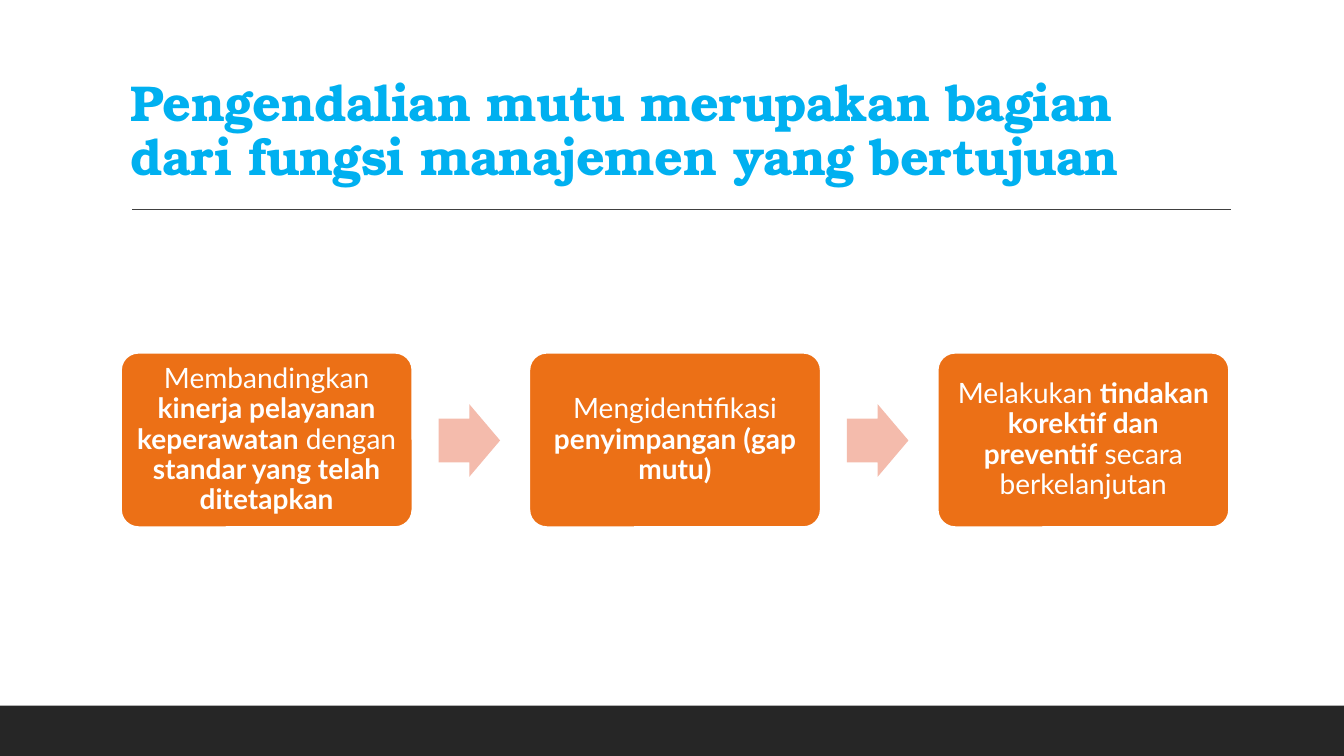
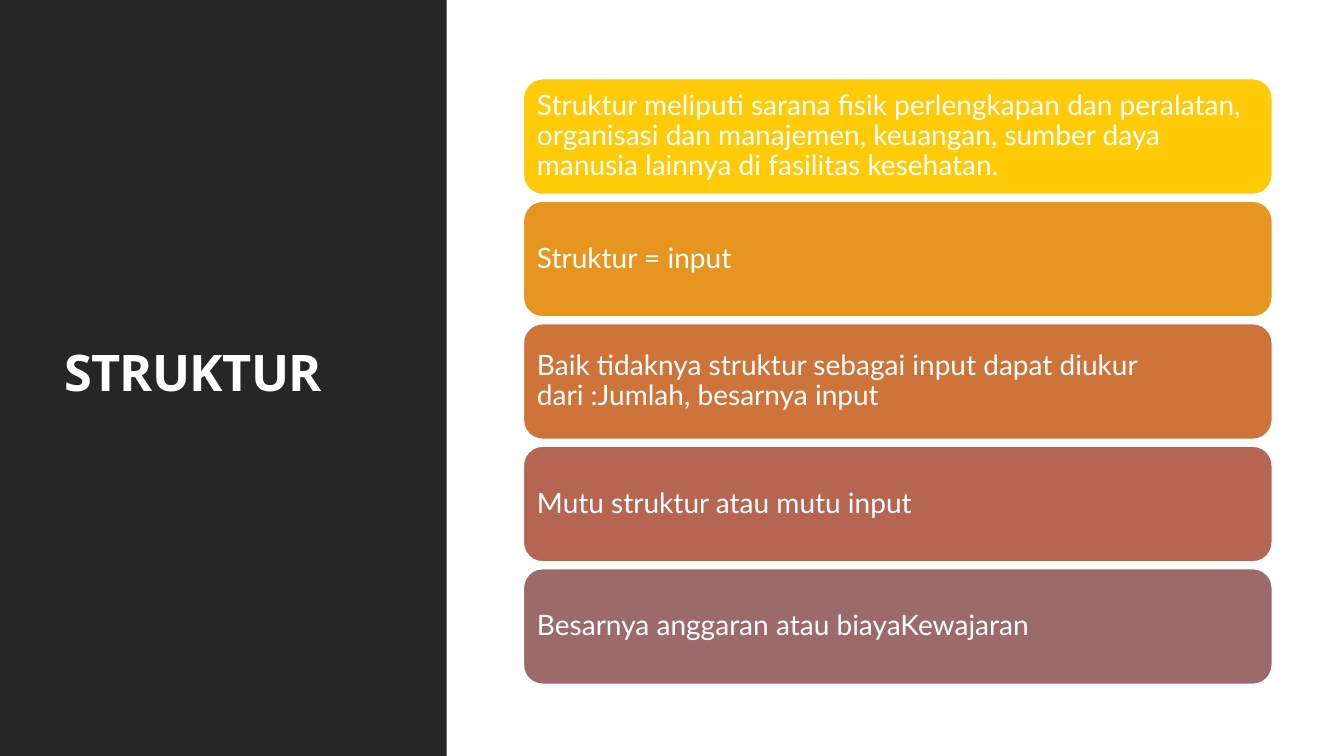
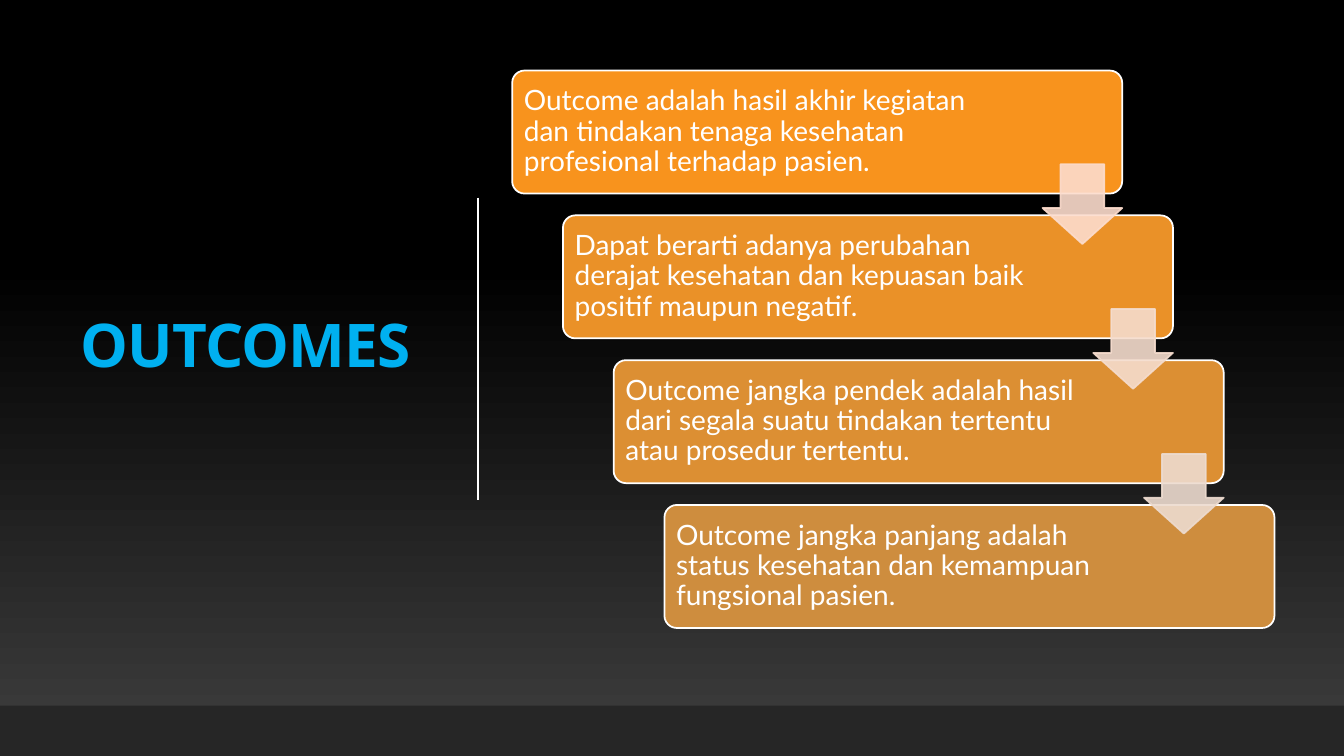
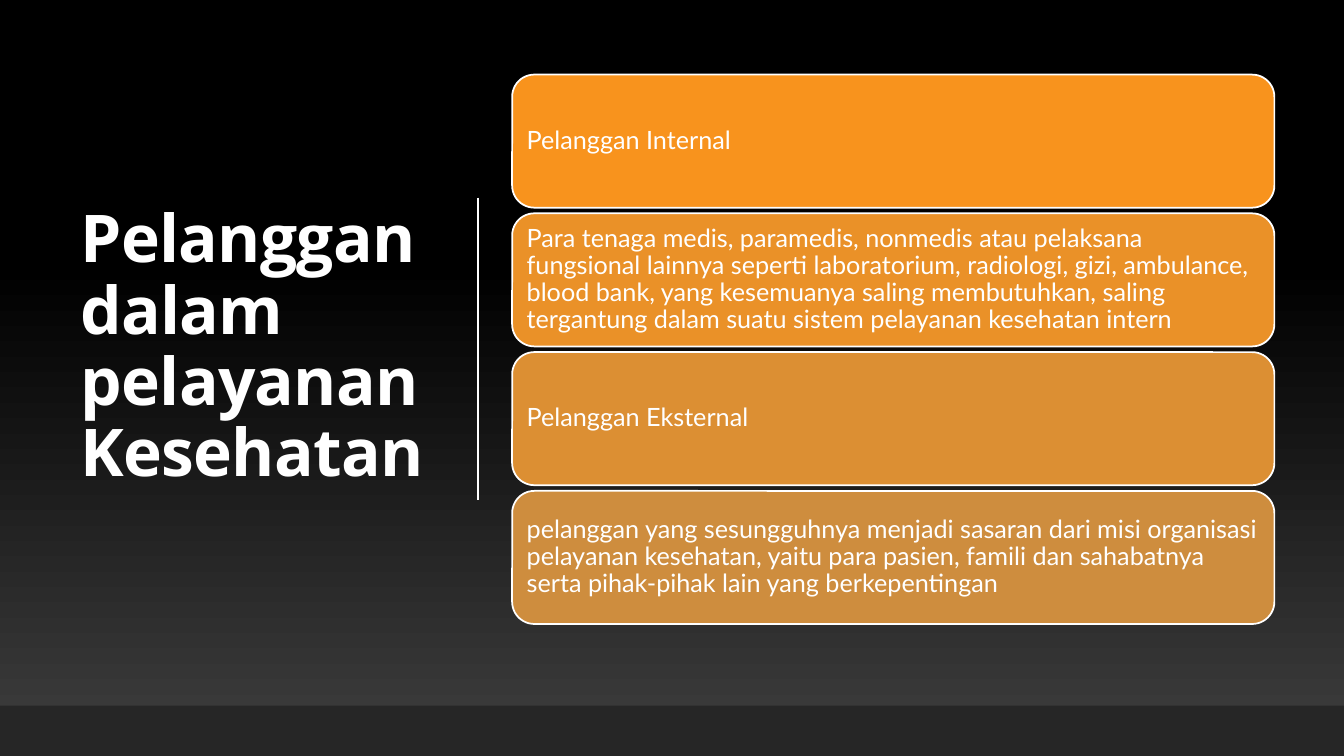
"""Build four slides on quality control in health care."""
from lxml import etree
from pptx import Presentation
from pptx import util as u
from pptx.dml.color import RGBColor
from pptx.enum import shapes, text
from pptx.oxml import ns

COLORS = {
    "white": "FFFFFF", "black": "000000", "dark": "262626", "gray": "3F3F3F",
    "rule": "404040", "blue": "00B0F0", "orange": "EC7016", "pink": "F4BBAC",
}
STRUCTURE_FILLS = ["FFCA08", "E69520", "CE7339", "B56551", "9C6A6A"]
ORANGE_FILLS = ["F8931D", "EA9128", "DC8F33", "CE8D3E"]
ARROW_FILLS = ["FCDCCD", "F5DCCD", "EDDBCF"]
BAND = (0, 7, 13.33, 0.5)
SIDE_TITLE = (0.7, 0.69, 3.69, 5.53)
SIDE_RULE = (4.74, 1.96, 4.74, 4.96)


def add_block(slide, kind, place, fill, line=None, adjustments=()):
    """Add a flat preset shape without a shadow."""
    shape = slide.shapes.add_shape(kind, *[u.Inches(value) for value in place])
    shape.shadow.inherit = False
    shape.fill.solid()
    shape.fill.fore_color.rgb = RGBColor.from_string(fill)
    if line:
        shape.line.color.rgb = RGBColor.from_string(line)
        shape.line.width = u.Pt(1.25)
    else:
        shape.line.fill.background()
    for index, value in enumerate(adjustments):
        shape.adjustments[index] = value
    return shape


def add_card(slide, place, fill, segments, size=20, radius=0.16667, right=0.08,
             align=text.PP_ALIGN.LEFT):
    """Add a rounded card whose segments alternate regular and bold."""
    card = add_block(slide, shapes.MSO_SHAPE.ROUNDED_RECTANGLE, place, fill,
                     COLORS["white"], [radius])
    frame = card.text_frame
    frame.word_wrap = True
    frame.vertical_anchor = text.MSO_ANCHOR.MIDDLE
    frame.margin_left = frame.margin_top = frame.margin_bottom = u.Inches(0.08)
    frame.margin_right = u.Inches(right)
    paragraph = frame.paragraphs[0]
    paragraph.alignment = align
    paragraph.line_spacing = 0.9
    for index, segment in enumerate(segments):
        run = paragraph.add_run()
        run.text = segment
        run.font.name = "Lato"
        run.font.size = u.Pt(size)
        run.font.bold = index % 2 == 1
        run.font.color.rgb = RGBColor.from_string(COLORS["white"])


presentation = Presentation()
presentation.slide_width = u.Inches(13.33)
presentation.slide_height = u.Inches(7.5)

frames = [
    ("Pengendalian mutu merupakan bagian dari fungsi manajemen yang bertujuan",
     (1.2, 0.31, 11, 1.59), text.MSO_ANCHOR.BOTTOM, "TeX Gyre Bonum", 36, "blue",
     False, BAND, (1.31, 2.08, 12.21, 2.08), "rule"),
    ("STRUKTUR", (0.54, 0.57, 3.37, 6.31), text.MSO_ANCHOR.MIDDLE, "Open Sans", 36,
     "white", False, (0, 0, 4.43, 7.5), None, None),
    ("OUTCOMES", SIDE_TITLE, text.MSO_ANCHOR.MIDDLE, "Open Sans", 43, "blue",
     True, BAND, SIDE_RULE, "white"),
    ("Pelanggan dalam pelayanan Kesehatan", SIDE_TITLE, text.MSO_ANCHOR.MIDDLE,
     "Open Sans", 47, "white", True, BAND, SIDE_RULE, "white"),
]
slides = []
for title, place, anchor, font, size, color, is_dark, panel, rule, rule_color in frames:
    slide = presentation.slides.add_slide(presentation.slide_layouts[6])
    slides.append(slide)
    background = slide.background.fill
    if is_dark:
        background.gradient()
        background.gradient_angle = 90
        stops = zip(background.gradient_stops, [0, 0.65], ["gray", "black"])
        for stop, position, stop_color in stops:
            stop.position = position
            stop.color.rgb = RGBColor.from_string(COLORS[stop_color])
    else:
        background.solid()
        background.fore_color.rgb = RGBColor.from_string(COLORS["white"])
    add_block(slide, shapes.MSO_SHAPE.RECTANGLE, panel, COLORS["dark"])

    title_box = slide.shapes.add_textbox(*[u.Inches(value) for value in place])
    title_box.text_frame.word_wrap = True
    title_box.text_frame.vertical_anchor = anchor
    title_box.text_frame.text = title
    paragraph = title_box.text_frame.paragraphs[0]
    paragraph.line_spacing = 0.9
    run = paragraph.runs[0]
    run.font.name = font
    run.font.size = u.Pt(size)
    run.font.bold = True
    run.font.color.rgb = RGBColor.from_string(COLORS[color])
    run.font._element.set("spc", "-50")

    if rule:
        connector = slide.shapes.add_connector(
            shapes.MSO_CONNECTOR.STRAIGHT, *[u.Inches(value) for value in rule])
        connector.line.color.rgb = RGBColor.from_string(COLORS[rule_color])
        connector.line.width = u.Pt(1)
        etree.SubElement(connector._element.spPr, ns.qn("a:effectLst"))

purpose_slide, structure_slide, outcome_slide, customer_slide = slides

purposes = [
    ["Membandingkan ", "kinerja pelayanan keperawatan", " dengan ",
     "standar yang telah ditetapkan"],
    ["Mengidentifikasi ", "penyimpangan (gap mutu)"],
    ["Melakukan ", "tindakan korektif dan preventif", " secara berkelanjutan"],
]
for index, segments in enumerate(purposes):
    left = 1.2 + index * 4.05
    add_card(purpose_slide, (left, 3.5, 2.89, 1.73), COLORS["orange"], segments,
             radius=0.1, align=text.PP_ALIGN.CENTER)
    if index < len(purposes) - 1:
        add_block(purpose_slide, shapes.MSO_SHAPE.RIGHT_ARROW,
                  (left + 3.15, 4.01, 0.61, 0.72), COLORS["pink"],
                  adjustments=[0.6, 0.5])

structures = [
    "Struktur meliputi sarana fisik perlengkapan dan peralatan, organisasi dan "
    "manajemen, keuangan, sumber daya manusia lainnya di fasilitas kesehatan.",
    "Struktur = input",
    "Baik tidaknya struktur sebagai input dapat diukur dari :Jumlah, besarnya input",
    "Mutu struktur atau mutu input",
    "Besarnya anggaran atau biayaKewajaran",
]
structure_step = (5.64 - 0.78) / (len(structures) - 1)
for index, (words, fill) in enumerate(zip(structures, STRUCTURE_FILLS)):
    add_card(structure_slide, (5.19, 0.78 + index * structure_step, 7.43, 1.15),
             fill, [words])

outcomes = [
    "Outcome adalah hasil akhir kegiatan dan tindakan tenaga kesehatan profesional "
    "terhadap pasien.",
    "Dapat berarti adanya perubahan derajat kesehatan dan kepuasan baik positif "
    "maupun negatif.",
    "Outcome jangka pendek adalah hasil dari segala suatu tindakan tertentu atau "
    "prosedur tertentu.",
    "Outcome jangka panjang adalah status kesehatan dan kemampuan fungsional pasien.",
]
step_across = (6.59 - 5.08) / (len(outcomes) - 1)
step_down = (5.01 - 0.7) / (len(outcomes) - 1)
for index, (words, fill) in enumerate(zip(outcomes, ORANGE_FILLS)):
    add_card(outcome_slide,
             (5.08 + index * step_across, 0.7 + index * step_down, 6.05, 1.22),
             fill, [words], radius=0.1, right=1.38)
for index, fill in enumerate(ARROW_FILLS):
    arrow = add_block(
        outcome_slide, shapes.MSO_SHAPE.DOWN_ARROW,
        (10.34 + index * step_across, 1.63 + index * step_down, 0.79, 0.79),
        fill, fill, [0.55, 0.45])
    for color in arrow._element.spPr.iter(ns.qn("a:srgbClr")):
        etree.SubElement(color, ns.qn("a:alpha"), val="90000")

customers = [
    "Pelanggan Internal",
    "Para tenaga medis, paramedis, nonmedis atau pelaksana fungsional lainnya seperti "
    "laboratorium, radiologi, gizi, ambulance, blood bank, yang kesemuanya saling "
    "membutuhkan, saling tergantung dalam suatu sistem pelayanan kesehatan intern",
    "Pelanggan Eksternal",
    "pelanggan yang sesungguhnya menjadi sasaran dari misi organisasi pelayanan "
    "kesehatan, yaitu para pasien, famili dan sahabatnya serta pihak-pihak lain yang "
    "berkepentingan",
]
customer_step = (4.87 - 0.74) / (len(customers) - 1)
for index, (words, fill) in enumerate(zip(customers, ORANGE_FILLS)):
    add_card(customer_slide, (5.08, 0.74 + index * customer_step, 7.56, 1.32),
             fill, [words], size=18)

presentation.save("out.pptx")
